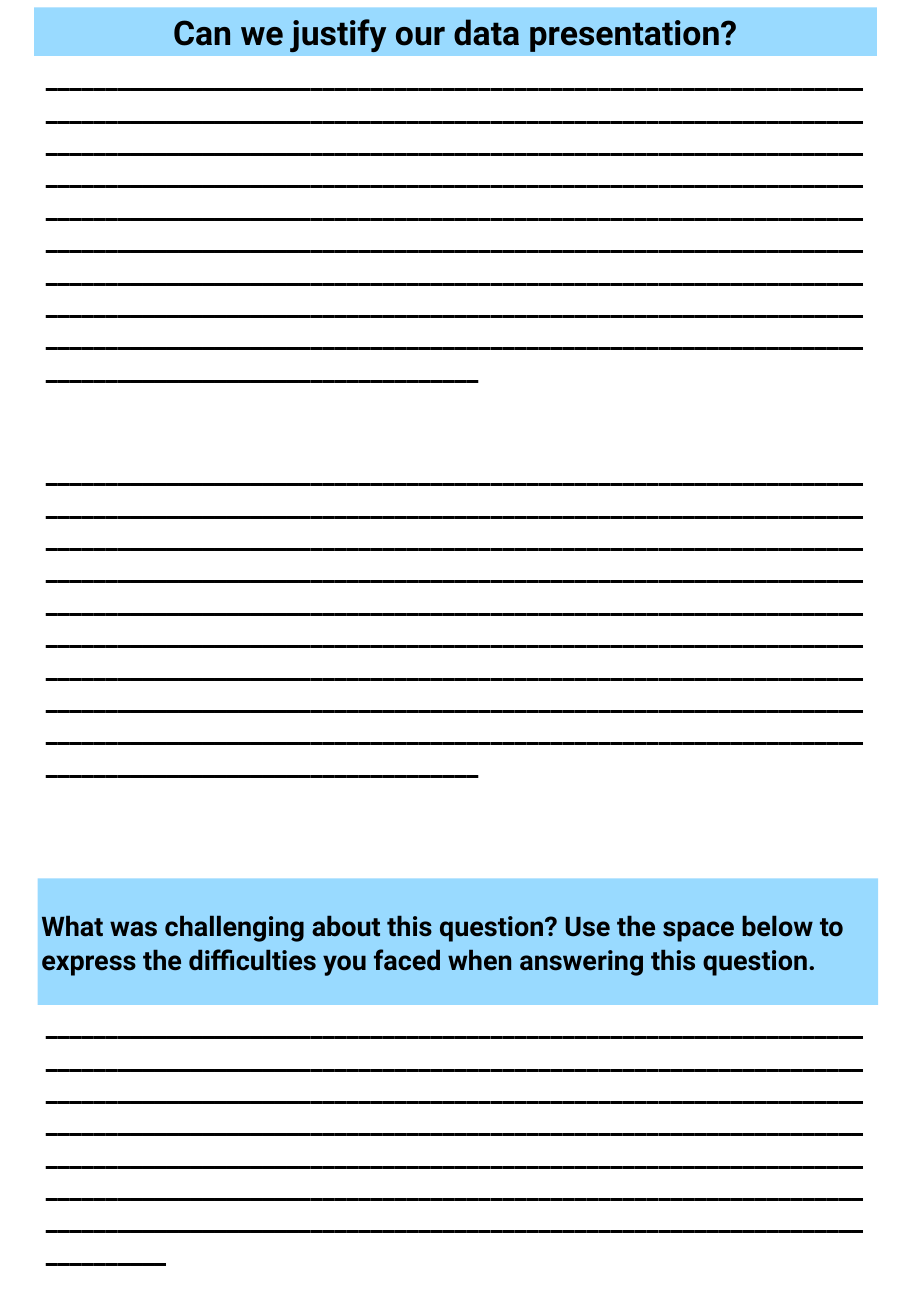
from pptx import Presentation
from pptx.dml.color import RGBColor
from pptx.enum import shapes, text
from pptx.util import Inches, Pt

COLOURS = {"band": "99DAFF", "ink": "000000", "page": "FFFFFF"}


def write(shape, words, size=16, align=text.PP_ALIGN.LEFT, anchor=text.MSO_ANCHOR.TOP,
          margins=(0.1, 0.05), line_spacing=None, space_after=None):
    frame = shape.text_frame
    frame.word_wrap = True
    frame.auto_size = text.MSO_AUTO_SIZE.NONE
    frame.vertical_anchor = anchor
    frame.margin_left = frame.margin_right = Inches(margins[0])
    frame.margin_top = frame.margin_bottom = Inches(margins[1])
    paragraph = frame.paragraphs[0]
    paragraph.alignment = align
    paragraph.line_spacing = line_spacing
    paragraph.space_after = space_after
    run = paragraph.add_run()
    run.text = words
    run.font.name = "Roboto"
    run.font.size = Pt(size)
    run.font.bold = True
    run.font.color.rgb = RGBColor.from_string(COLOURS["ink"])


def fill_band(shape):
    shape.fill.solid()
    shape.fill.fore_color.rgb = RGBColor.from_string(COLOURS["band"])
    shape.line.fill.background()


presentation = Presentation()
presentation.slide_width = Inches(7.5)
presentation.slide_height = Inches(10.83)
slide = presentation.slides.add_slide(presentation.slide_layouts[5])
slide.background.fill.solid()
slide.background.fill.fore_color.rgb = RGBColor.from_string(COLOURS["page"])

title = slide.shapes.title
title.left, title.top = Inches(0.28), Inches(0.06)
title.width, title.height = Inches(6.94), Inches(0.4)
fill_band(title)
write(title, "Can we justify our data presentation?", size=20,
      align=text.PP_ALIGN.CENTER, anchor=text.MSO_ANCHOR.MIDDLE, margins=(0.03, 0.03))

question = slide.shapes.add_shape(
    shapes.MSO_SHAPE.RECTANGLE, Inches(0.31), Inches(7.23), Inches(6.92), Inches(1.04))
question.shadow.inherit = False
fill_band(question)
write(question,
      "What was challenging about this question? Use the space below to express "
      "the difficulties you faced when answering this question.",
      anchor=text.MSO_ANCHOR.MIDDLE, margins=(0.03, 0.03),
      line_spacing=1.07, space_after=Pt(8))

for top, height, underscores in [(0.46, 3.33, 648), (3.71, 3.33, 648), (8.26, 2.52, 486)]:
    answer = slide.shapes.add_textbox(Inches(0.28), Inches(top), Inches(6.94), Inches(height))
    write(answer, "_" * underscores)

presentation.save("out.pptx")
